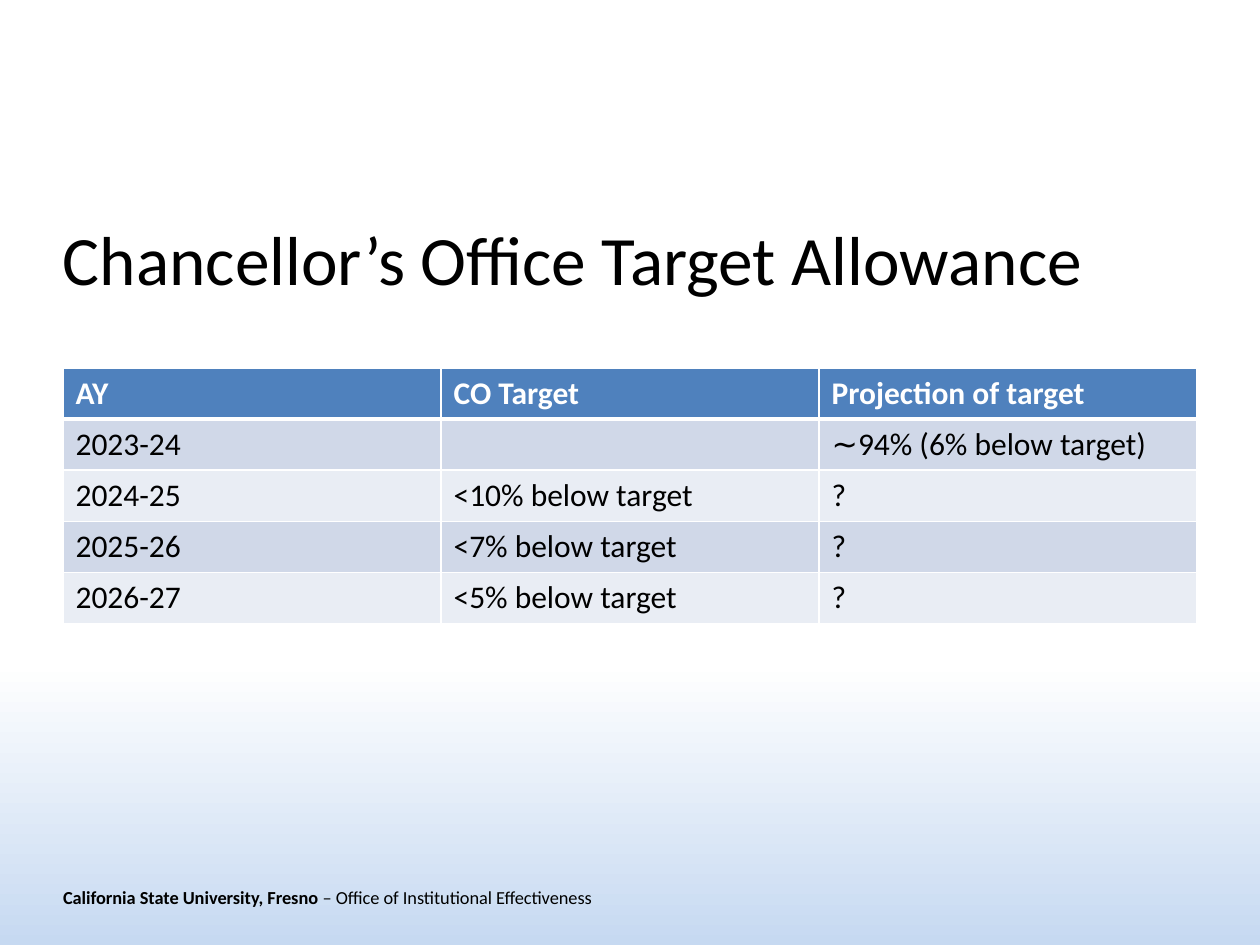
from lxml.etree import SubElement
from pptx import Presentation
from pptx.dml.color import RGBColor
from pptx.enum.text import MSO_ANCHOR
from pptx.oxml.ns import qn
from pptx.util import Inches, Pt

TITLE = "Chancellor’s Office Target Allowance"
FOOTER = [
    ("California State University, Fresno ", True),
    ("– Office of Institutional Effectiveness", False),
]
ROWS = [
    ("AY", "CO Target", "Projection of target"),
    ("2023-24", "", "∼94% (6% below target)"),
    ("2024-25", "<10% below target", "?"),
    ("2025-26", "<7% below target", "?"),
    ("2026-27", "<5% below target", "?"),
]
BACKGROUND_STOPS = [(0.7, "FFFFFF"), (1, "C6D9F1")]
HEADER_FILL = "4F81BD"
BAND_FILLS = ["D0D8E8", "E9EDF4"]
LEFT, WIDTH = 0.5, 9
ROW_HEIGHT = 0.406


def color(hex_string):
    return RGBColor.from_string(hex_string)


def add_span(para, text, size=18, bold=False, ink="000000"):
    span = para.add_run()
    span.text = text
    span.font.name = "Calibri"
    span.font.size = Pt(size)
    span.font.bold = bold
    span.font.color.rgb = color(ink)


def add_line(page, spans, top, width, height, size):
    """Add a one-line text box on the left margin from (text, bold) pairs."""
    box = page.shapes.add_textbox(
        Inches(LEFT), Inches(top), Inches(width), Inches(height))
    frame = box.text_frame
    frame.word_wrap = True
    frame.vertical_anchor = MSO_ANCHOR.MIDDLE
    frame.margin_left = frame.margin_right = 0
    for text, bold in spans:
        add_span(frame.paragraphs[0], text, size=size, bold=bold)


def set_borders(cell, widths):
    """Draw white borders; widths maps each side (L, R, T, B) to points."""
    properties = cell._tc.get_or_add_tcPr()
    for index, (side, points) in enumerate(widths.items()):
        line = properties.makeelement(qn(f"a:ln{side}"), {"w": str(Pt(points))})
        fill = SubElement(line, qn("a:solidFill"))
        SubElement(fill, qn("a:srgbClr"), val="FFFFFF")
        properties.insert(index, line)


def add_target_table(page):
    columns = len(ROWS[0])
    table = page.shapes.add_table(
        len(ROWS), columns, Inches(LEFT), Inches(2.92),
        Inches(WIDTH), Inches(ROW_HEIGHT * len(ROWS))).table
    for column in table.columns:
        column.width = Inches(WIDTH / columns)
    for r, values in enumerate(ROWS):
        header = r == 0
        table.rows[r].height = Inches(ROW_HEIGHT)
        for c, value in enumerate(values):
            cell = table.cell(r, c)
            cell.fill.solid()
            cell.fill.fore_color.rgb = color(
                HEADER_FILL if header else BAND_FILLS[(r - 1) % 2])
            set_borders(cell, {"L": 1, "R": 1, "T": 3 if r == 1 else 1,
                               "B": 3 if header else 1})
            if value:
                add_span(cell.text_frame.paragraphs[0], value, bold=header,
                         ink="FFFFFF" if header else "000000")


def main():
    deck = Presentation()
    deck.slide_width, deck.slide_height = Inches(10), Inches(7.5)
    page = deck.slides.add_slide(deck.slide_layouts[6])

    backdrop = page.background.fill
    backdrop.gradient()
    backdrop.gradient_angle = 270
    for stop, (position, shade) in zip(backdrop.gradient_stops, BACKGROUND_STOPS):
        stop.position = position
        stop.color.rgb = color(shade)

    add_line(page, FOOTER, top=6.92, width=5.75, height=0.4, size=10.5)
    add_line(page, [(TITLE, False)], top=1.42, width=WIDTH, height=1.25, size=39.6)
    add_target_table(page)
    deck.save("out.pptx")


if __name__ == "__main__":
    main()
